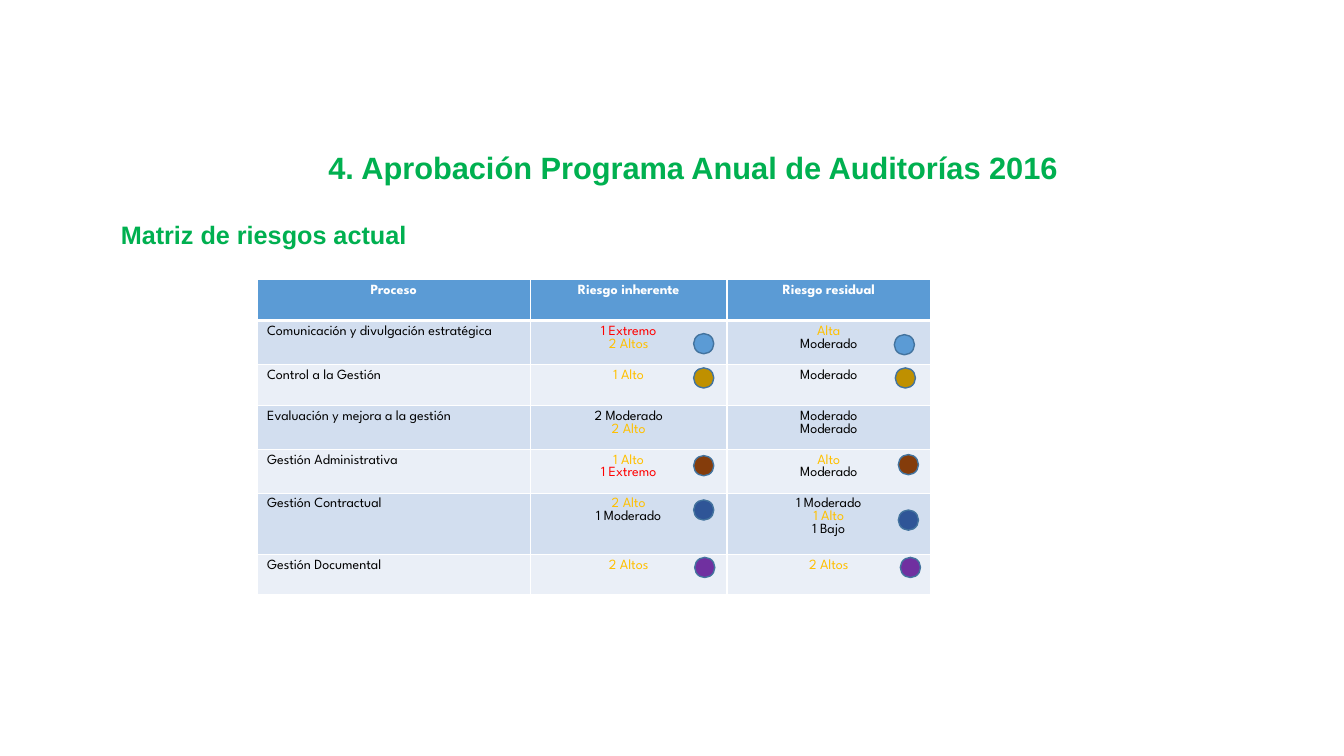
from dataclasses import dataclass

from lxml.etree import SubElement
from pptx import Presentation
from pptx.dml.color import RGBColor
from pptx.enum.shapes import MSO_SHAPE
from pptx.enum.text import MSO_ANCHOR, MSO_AUTO_SIZE, PP_ALIGN
from pptx.oxml.ns import qn
from pptx.util import Inches, Pt

GREEN = RGBColor(0x00, 0xB0, 0x50)
WHITE = RGBColor(0xFF, 0xFF, 0xFF)
BLACK = RGBColor(0x00, 0x00, 0x00)
RED = RGBColor(0xFF, 0x00, 0x00)
AMBER = RGBColor(0xFF, 0xC0, 0x00)
HEADER_BLUE = RGBColor(0x5B, 0x9B, 0xD5)
BAND_DARK = RGBColor(0xD2, 0xDE, 0xEF)
BAND_LIGHT = RGBColor(0xEA, 0xEF, 0xF7)
OUTLINE = RGBColor(0x43, 0x73, 0x9E)
GOLD = RGBColor(0xBF, 0x90, 0x00)
BROWN = RGBColor(0x84, 0x3C, 0x0B)
NAVY = RGBColor(0x2F, 0x55, 0x97)
PURPLE = RGBColor(0x70, 0x30, 0xA0)

HEADERS = ("Proceso", "Riesgo inherente", "Riesgo residual")
COLUMN_WIDTHS = (2.71, 1.95, 2.02)
HEADER_HEIGHT = 0.41
DOT_SIZE = 0.2


@dataclass
class Process:
    name: str
    inherent: str
    residual: str
    height: float


@dataclass
class DotPair:
    """One marker in each risk column, as (left, top)."""
    color: RGBColor
    inherent: tuple[float, float]
    residual: tuple[float, float]


PROCESSES = (
    Process("Comunicación y divulgación estratégica", "1 Extremo\n2 Altos", "Alta\nModerado", 0.43),
    Process("Control a la Gestión", "1 Alto", "Moderado", 0.41),
    Process("Evaluación y mejora a la gestión", "2 Moderado\n2 Alto", "Moderado\nModerado", 0.43),
    Process("Gestión Administrativa", "1 Alto\n1 Extremo", "Alto\nModerado", 0.43),
    Process("Gestión Contractual", "2 Alto\n1 Moderado", "1 Moderado\n1 Alto\n1 Bajo", 0.61),
    Process("Gestión Documental", "2 Altos", "2 Altos", 0.4),
)

DOT_PAIRS = (
    DotPair(HEADER_BLUE, (6.88, 3.31), (8.87, 3.32)),
    DotPair(GOLD, (6.88, 3.65), (8.88, 3.65)),
    DotPair(BROWN, (6.88, 4.52), (8.91, 4.51)),
    DotPair(NAVY, (6.88, 4.96), (8.91, 5.06)),
    DotPair(PURPLE, (6.89, 5.53), (8.93, 5.53)),
)


def risk_color(text: str) -> RGBColor:
    if "Extremo" in text:
        return RED
    return AMBER if "Alt" in text else BLACK


def format_heading(sp, text: str, size: int, align: PP_ALIGN) -> None:
    tf = sp.text_frame
    tf.text = text
    tf.word_wrap = True
    tf.auto_size = MSO_AUTO_SIZE.SHAPE_TO_FIT_TEXT
    tf.vertical_anchor = MSO_ANCHOR.TOP
    p = tf.paragraphs[0]
    p.alignment = align
    font = p.runs[0].font
    font.name, font.size, font.bold = "Arial", Pt(size), True
    font.color.rgb = GREEN


def set_borders(cell, top: int, bottom: int) -> None:
    """Draw white cell borders; top and bottom are widths in points."""
    tc_pr = cell._tc.get_or_add_tcPr()
    for tag, width in (("a:lnL", 1), ("a:lnR", 1), ("a:lnT", top), ("a:lnB", bottom)):
        ln = SubElement(tc_pr, qn(tag), w=str(Pt(width)))
        SubElement(SubElement(ln, qn("a:solidFill")), qn("a:srgbClr"), val=str(WHITE))


def fill_cell(cell, text: str, row: int, column: int) -> None:
    is_header = row == 0
    set_borders(cell, 3 if row == 1 else 1, 3 if is_header else 1)
    cell.fill.solid()
    band = BAND_DARK if row % 2 else BAND_LIGHT
    cell.fill.fore_color.rgb = HEADER_BLUE if is_header else band
    cell.text_frame.text = text
    for p in cell.text_frame.paragraphs:
        p.alignment = PP_ALIGN.CENTER if is_header or column else PP_ALIGN.LEFT
        font = p.runs[0].font
        font.name, font.size, font.bold = "League Spartan", Pt(10), is_header
        if is_header:
            font.color.rgb = WHITE
        else:
            font.color.rgb = risk_color(p.text) if column else BLACK


def add_risk_table(slide) -> None:
    rows = [HEADERS] + [(pr.name, pr.inherent, pr.residual) for pr in PROCESSES]
    heights = [HEADER_HEIGHT] + [pr.height for pr in PROCESSES]
    table = slide.shapes.add_table(
        len(rows), len(HEADERS), Inches(2.55), Inches(2.77),
        Inches(sum(COLUMN_WIDTHS)), Inches(sum(heights))).table
    for column, width in zip(table.columns, COLUMN_WIDTHS):
        column.width = Inches(width)
    for r, (texts, height) in enumerate(zip(rows, heights)):
        table.rows[r].height = Inches(height)
        for c, text in enumerate(texts):
            fill_cell(table.cell(r, c), text, r, c)


def add_dot(slide, color: RGBColor, left: float, top: float) -> None:
    sp = slide.shapes.add_shape(MSO_SHAPE.OVAL, Inches(left), Inches(top),
                                Inches(DOT_SIZE), Inches(DOT_SIZE))
    sp.shadow.inherit = False
    sp.fill.solid()
    sp.fill.fore_color.rgb = color
    sp.line.color.rgb = OUTLINE
    sp.line.width = Pt(1)


def main() -> None:
    prs = Presentation()
    prs.slide_width, prs.slide_height = Inches(13.33), Inches(7.5)
    slide = prs.slides.add_slide(prs.slide_layouts[5])

    title = slide.shapes.title
    title.left, title.top = Inches(2.9), Inches(1.43)
    title.width, title.height = Inches(7.95), Inches(0.47)
    format_heading(title, "4. Aprobación Programa Anual de Auditorías 2016", 22, PP_ALIGN.CENTER)
    subtitle = slide.shapes.add_textbox(Inches(1.1), Inches(2.13), Inches(7.22), Inches(0.4))
    format_heading(subtitle, "Matriz de riesgos actual", 18, PP_ALIGN.LEFT)

    add_risk_table(slide)
    for pair in DOT_PAIRS:
        add_dot(slide, pair.color, *pair.inherent)
        add_dot(slide, pair.color, *pair.residual)
    prs.save("out.pptx")


if __name__ == "__main__":
    main()
